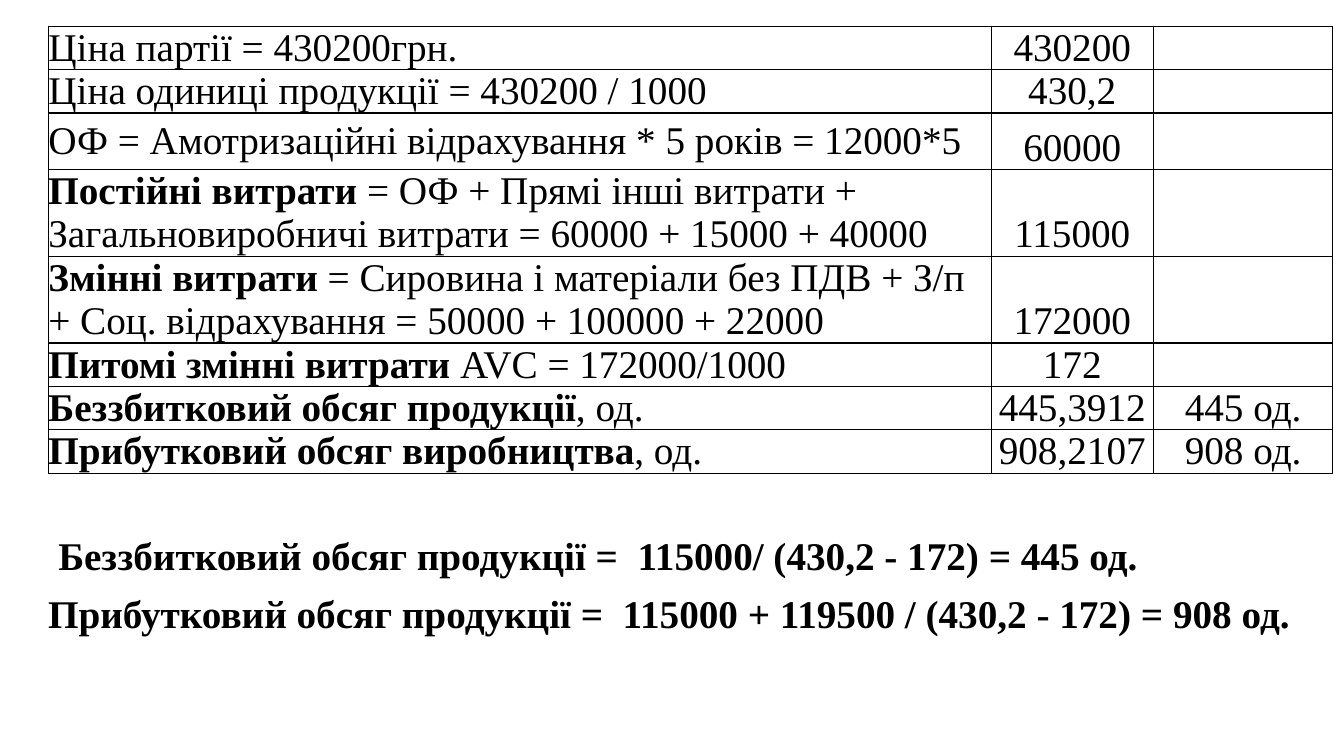
from lxml import etree
from pptx import Presentation
from pptx import util as u
from pptx.dml.color import RGBColor
from pptx.enum import text
from pptx.oxml.ns import qn

BLACK = "000000"
FONT = {"name": "Times New Roman", "size": u.Pt(28)}
COLUMN_WIDTHS = [9.35, 1.61, 1.78]
LINE_HEIGHT = 0.43
MIDDLE, BOTTOM = text.MSO_ANCHOR.MIDDLE, text.MSO_ANCHOR.BOTTOM

COST_ROWS = [
    (LINE_HEIGHT, MIDDLE, "", "Ціна партії = 430200грн.", "430200", ""),
    (LINE_HEIGHT, BOTTOM, "", "Ціна одиниці продукції = 430200 / 1000", "430,2", ""),
    (0.56, MIDDLE, "", "ОФ = Амотризаційні відрахування * 5 років = 12000*5", "60000", ""),
    (2 * LINE_HEIGHT, BOTTOM, "Постійні витрати ",
     "= ОФ + Прямі інші витрати + Загальновиробничі витрати = 60000 + 15000 + 40000", "115000", ""),
    (2 * LINE_HEIGHT, BOTTOM, "Змінні витрати ",
     "= Сировина і матеріали без ПДВ + З/п + Соц. відрахування = 50000 + 100000 + 22000", "172000", ""),
    (LINE_HEIGHT, BOTTOM, "Питомі змінні витрати ", "AVC = 172000/1000", "172", ""),
    (LINE_HEIGHT, BOTTOM, "Беззбитковий обсяг продукції", ", од.", "445,3912", "445 од."),
    (LINE_HEIGHT, BOTTOM, "Прибутковий обсяг виробництва", ", од.", "908,2107", "908 од."),
]

FORMULAS = [
    (0.48, 5.22, 11.24, "Беззбитковий обсяг продукції =  115000/ (430,2 - 172) = 445 од."),
    (0.38, 5.8, 12.83, "Прибутковий обсяг продукції =  115000 + 119500 / (430,2 - 172) = 908 од."),
]


def color(value):
    return RGBColor.from_string(value)


def apply_format(target, values):
    for name, value in values.items():
        setattr(target, name, value)


def add_run(paragraph, content, bold=False):
    if content:
        run = paragraph.add_run()
        run.text = content
        apply_format(run.font, {**FONT, "bold": bold})
        run.font.color.rgb = color(BLACK)


def add_borders(cell):
    properties = cell._tc.get_or_add_tcPr()
    for position, side in enumerate(("lnL", "lnR", "lnT", "lnB")):
        line = etree.Element(qn(f"a:{side}"), w=str(u.Pt(1)))
        fill = etree.SubElement(line, qn("a:solidFill"))
        etree.SubElement(fill, qn("a:srgbClr"), val=BLACK)
        properties.insert(position, line)


def fill_cell(cell, anchor, alignment, bold_text, plain_text):
    margins = {f"margin_{side}": 0 for side in ("left", "right", "top", "bottom")}
    apply_format(cell, {**margins, "vertical_anchor": anchor})
    cell.fill.background()
    add_borders(cell)
    paragraph = cell.text_frame.paragraphs[0]
    paragraph.alignment = alignment
    add_run(paragraph, bold_text, True)
    add_run(paragraph, plain_text)


def add_cost_table(slide, left, top):
    width = sum(COLUMN_WIDTHS)
    height = sum(row[0] for row in COST_ROWS)
    box = [u.Inches(value) for value in (left, top, width, height)]
    table = slide.shapes.add_table(len(COST_ROWS), len(COLUMN_WIDTHS), *box).table
    apply_format(table, {"first_row": False, "horz_banding": False})
    for column, column_width in zip(table.columns, COLUMN_WIDTHS):
        column.width = u.Inches(column_width)
    for row, (row_height, anchor, term, formula, *results) in zip(table.rows, COST_ROWS):
        row.height = u.Inches(row_height)
        label_cell, *result_cells = row.cells
        fill_cell(label_cell, anchor, text.PP_ALIGN.LEFT, term, formula)
        for cell, result in zip(result_cells, results):
            fill_cell(cell, BOTTOM, text.PP_ALIGN.CENTER, "", result)


def add_formula(slide, left, top, width, content):
    box = [u.Inches(value) for value in (left, top, width, 0.57)]
    frame = slide.shapes.add_textbox(*box).text_frame
    apply_format(frame, {"word_wrap": True, "auto_size": text.MSO_AUTO_SIZE.SHAPE_TO_FIT_TEXT})
    add_run(frame.paragraphs[0], content, True)


def main():
    presentation = Presentation()
    apply_format(presentation, {"slide_width": u.Inches(13.33), "slide_height": u.Inches(7.5)})
    slide = presentation.slides.add_slide(presentation.slide_layouts[6])
    add_cost_table(slide, 0.48, 0.26)
    for formula in FORMULAS:
        add_formula(slide, *formula)
    presentation.save("out.pptx")


if __name__ == "__main__":
    main()
